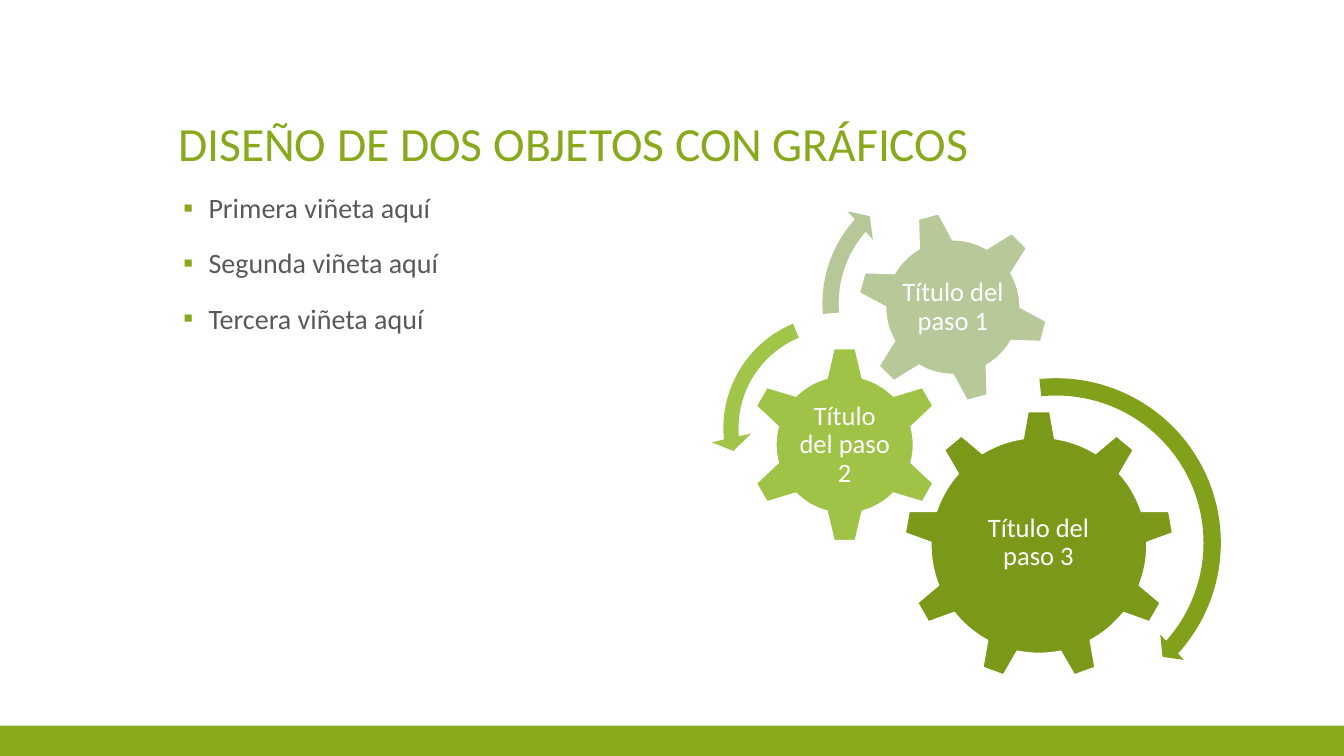
from dataclasses import dataclass

import lxml.etree
import pptx
import pptx.dml.color
import pptx.enum.shapes
import pptx.enum.text
import pptx.oxml.ns
import pptx.util

EMU_PER_PX = 9525
SHAPES = pptx.enum.shapes.MSO_SHAPE
ALIGN = pptx.enum.text.PP_ALIGN
ANCHOR = pptx.enum.text.MSO_ANCHOR


@dataclass(frozen=True)
class Theme:
    font: str = "Calibri"
    accent: str = "87A91B"
    body: str = "595959"
    white: str = "FFFFFF"
    gear_dark: str = "7B9919"
    gear_mid: str = "9EC346"
    gear_pale: str = "B7C899"
    arrow_dark: str = "81A11A"
    arrow_mid: str = "A0C549"
    arrow_pale: str = "B7C898"
    title_size: int = 34
    body_size: int = 20
    gear_size: int = 19
    line_spacing: float = 0.9


THEME = Theme()


def px(value):
    return pptx.util.Emu(value * EMU_PER_PX)


def rgb(color):
    return pptx.dml.color.RGBColor.from_string(color)


def place(shape, left, top, width, height):
    shape.left, shape.top = px(left), px(top)
    shape.width, shape.height = px(width), px(height)


def style_paragraph(paragraph, size, color, alignment):
    paragraph.alignment = alignment
    paragraph.line_spacing = THEME.line_spacing
    paragraph.font.name = THEME.font
    paragraph.font.size = pptx.util.Pt(size)
    paragraph.font.color.rgb = rgb(color)


def add_bullet(paragraph, symbol, color):
    properties = paragraph._p.get_or_add_pPr()
    properties.set("marL", str(px(29)))
    properties.set("indent", str(px(-24)))
    name = pptx.oxml.ns.qn
    bullet_color = lxml.etree.SubElement(properties, name("a:buClr"))
    lxml.etree.SubElement(bullet_color, name("a:srgbClr"), val=color)
    lxml.etree.SubElement(properties, name("a:buFont"), typeface=THEME.font)
    lxml.etree.SubElement(properties, name("a:buChar"), char=symbol)


def add_solid(slide, kind, box, fill, outline=None):
    shape = slide.shapes.add_shape(kind, *map(px, box))
    shape.shadow.inherit = False
    shape.fill.solid()
    shape.fill.fore_color.rgb = rgb(fill)
    if outline:
        shape.line.color.rgb = rgb(outline)
        shape.line.width = pptx.util.Pt(1)
    else:
        shape.line.fill.background()
    return shape


def fill_title(slide, text):
    title = slide.shapes.title
    place(title, 160, 48, 960, 120)
    frame = title.text_frame
    frame.text = text
    frame.auto_size = pptx.enum.text.MSO_AUTO_SIZE.NONE
    frame.vertical_anchor = ANCHOR.BOTTOM
    style_paragraph(frame.paragraphs[0], THEME.title_size, THEME.accent, ALIGN.LEFT)


def fill_list(slide, items):
    body = slide.placeholders[1]
    place(body, 160, 180, 472, 468)
    frame = body.text_frame
    frame.text = "\n".join(items)
    frame.auto_size = pptx.enum.text.MSO_AUTO_SIZE.NONE
    for paragraph in frame.paragraphs:
        paragraph.space_before = pptx.util.Pt(18)
        add_bullet(paragraph, "▪", THEME.accent)
        style_paragraph(paragraph, THEME.body_size, THEME.body, ALIGN.LEFT)


def add_gear(slide, kind, box, fill, label, label_box, rotation=0):
    gear = add_solid(slide, kind, box, fill, THEME.white)
    gear.rotation = rotation
    frame = slide.shapes.add_textbox(*map(px, label_box)).text_frame
    frame.word_wrap = True
    frame.vertical_anchor = ANCHOR.MIDDLE
    frame.margin_left = frame.margin_right = px(3)
    frame.margin_top = frame.margin_bottom = px(3)
    frame.text = label
    style_paragraph(frame.paragraphs[0], THEME.gear_size, THEME.white, ALIGN.CENTER)


def add_turn_arrow(slide, kind, left, top, side, fill, adjustments):
    arrow = add_solid(slide, kind, (left, top, side, side), fill)
    for index, value in enumerate(adjustments):
        arrow.adjustments[index] = value


def main():
    presentation = pptx.Presentation()
    presentation.slide_width, presentation.slide_height = px(1280), px(720)
    slide = presentation.slides.add_slide(presentation.slide_layouts[1])

    add_solid(slide, SHAPES.RECTANGLE, (0, 691, 1280, 29), THEME.accent)
    fill_title(slide, "DISEÑO DE DOS OBJETOS CON GRÁFICOS")
    fill_list(slide, ["Primera viñeta aquí", "Segunda viñeta aquí", "Tercera viñeta aquí"])

    add_gear(slide, SHAPES.GEAR_9, (861, 391, 257, 257), THEME.gear_dark,
             "Título del paso 3", (912, 451, 154, 132))
    add_gear(slide, SHAPES.GEAR_6, (711, 330, 187, 187), THEME.gear_mid,
             "Título del paso 2", (758, 378, 93, 92))
    add_gear(slide, SHAPES.GEAR_6, (816, 201, 183, 183), THEME.gear_pale,
             "Título del paso 1", (856, 241, 103, 103), rotation=345)

    add_turn_arrow(slide, SHAPES.CIRCULAR_ARROW, 841, 352, 330, THEME.arrow_dark,
                   (0.05, 2.99, 25.22, 158.48, 0.05))
    add_turn_arrow(slide, SHAPES.LEFT_CIRCULAR_ARROW, 677, 288, 240, THEME.arrow_mid,
                   (0.06, 4.3, 104.89, 148.38, 0.08))
    add_turn_arrow(slide, SHAPES.CIRCULAR_ARROW, 773, 160, 258, THEME.arrow_pale,
                   (0.06, 3.94, 133.14, 105.08, 0.07))

    presentation.save("out.pptx")


if __name__ == "__main__":
    main()
